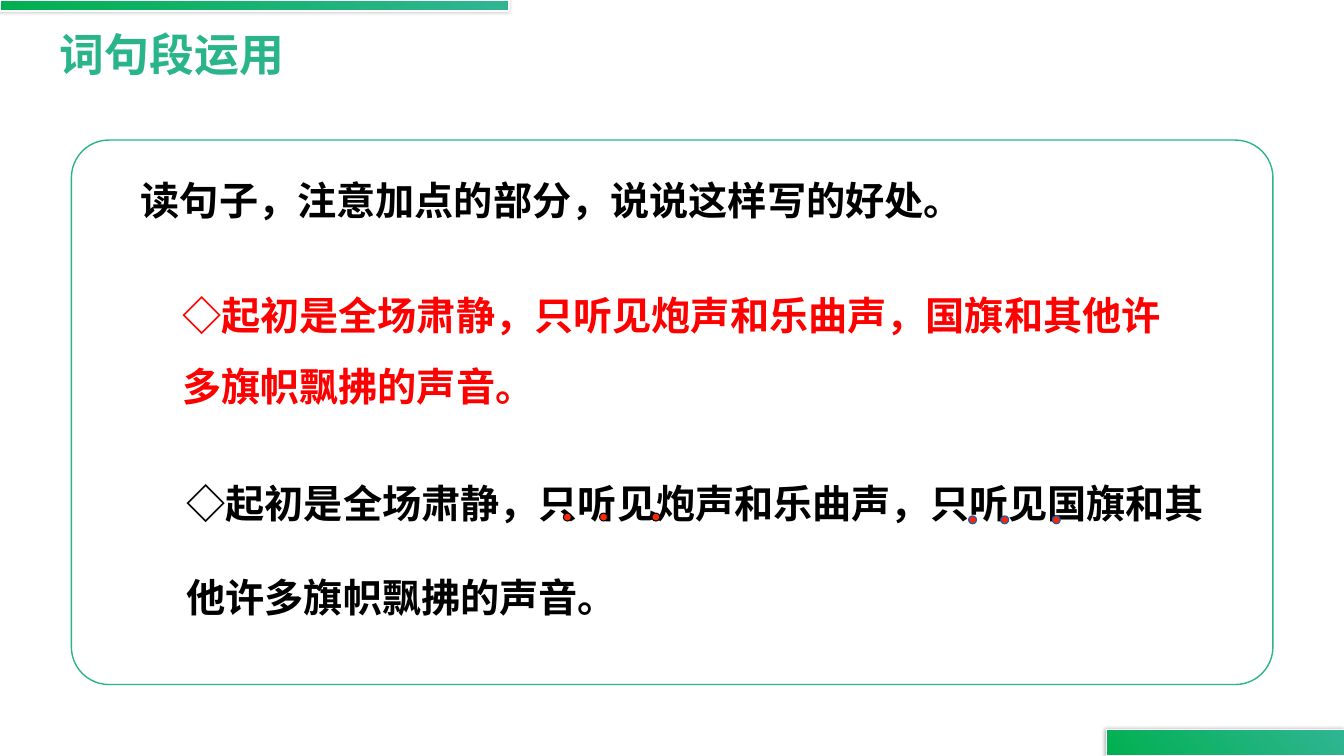
"""Build the slide on sentence practice with a framed pair of example sentences."""
from dataclasses import dataclass

from lxml.etree import SubElement
from pptx import Presentation
from pptx.dml.color import RGBColor
from pptx.enum.shapes import MSO_SHAPE
from pptx.enum.text import MSO_ANCHOR, MSO_AUTO_SIZE
from pptx.oxml.ns import qn
from pptx.shapes.autoshape import Shape
from pptx.slide import Slide
from pptx.util import Cm, Pt

COLOURS = {
    "green": "00B050",
    "teal": "30B593",
    "title": "2AB48A",
    "white": "FFFFFF",
    "black": "000000",
    "red": "FF0000",
    "dot": "F82704",
    "blue": "0563C1",
}
DOT_SIZE = 0.2


@dataclass(frozen=True)
class Area:
    left: float
    top: float
    width: float
    height: float

    def lengths(self) -> tuple[Cm, Cm, Cm, Cm]:
        return Cm(self.left), Cm(self.top), Cm(self.width), Cm(self.height)


@dataclass(frozen=True)
class Passage:
    text: str
    area: Area
    colour: str
    size: int = 28
    spacing: float = 1.0
    wrap: bool = True
    inset: float = 0.25
    anchor: MSO_ANCHOR = MSO_ANCHOR.TOP
    fit: MSO_AUTO_SIZE = MSO_AUTO_SIZE.SHAPE_TO_FIT_TEXT


@dataclass(frozen=True)
class DotRow:
    lefts: tuple[float, ...]
    top: float
    outline: str


BARS = (Area(0, 0, 12.83, 0.28), Area(27.89, 18.39, 5.99, 0.66))
FRAME = Area(1.8, 3.53, 30.28, 13.72)
PASSAGES = (
    Passage("词句段运用", Area(0.94, 0.74, 7.67, 1.4), "title", size=32, spacing=0.9,
            inset=0.57, anchor=MSO_ANCHOR.MIDDLE, fit=MSO_AUTO_SIZE.NONE),
    Passage("读句子，注意加点的部分，说说这样写的好处。",
            Area(3.3, 4.32, 22.02, 1.45), "black", wrap=False),
    Passage("◇起初是全场肃静，只听见炮声和乐曲声，国旗和其他许多旗帜飘拂的声音。",
            Area(4.34, 6.63, 26.11, 3.66), "red", spacing=1.5),
    Passage("◇起初是全场肃静，只听见炮声和乐曲声，只听见国旗和其他许多旗帜飘拂的声音。",
            Area(4.45, 10.77, 26.52, 4.7), "black", spacing=2.0),
)
DOT_ROWS = (
    DotRow((14.2, 15.11, 16.43), 12.93, "black"),
    DotRow((24.41, 25.22, 26.52), 13.0, "blue"),
)


def colour(name: str) -> RGBColor:
    return RGBColor.from_string(COLOURS[name])


def apply(target: object, values: dict[str, object]) -> None:
    for name, value in values.items():
        setattr(target, name, value)


def add_outlined(page: Slide, kind: MSO_SHAPE, area: Area, outline: str, width: float) -> Shape:
    shape = page.shapes.add_shape(kind, *area.lengths())
    shape.shadow.inherit = False
    shape.line.color.rgb = colour(outline)
    shape.line.width = Pt(width)
    return shape


def add_bar(page: Slide, area: Area) -> None:
    bar = add_outlined(page, MSO_SHAPE.RECTANGLE, area, "white", 1)
    bar.fill.gradient()
    bar.fill.gradient_angle = 45
    for stop, name in zip(bar.fill.gradient_stops, ("green", "teal")):
        apply(stop, {"position": 0.0 if name == "green" else 1.0})
        stop.color.rgb = colour(name)
    effects = bar.element.spPr.find(qn("a:effectLst"))
    shadow = SubElement(effects, qn("a:outerShdw"), blurRad=str(Pt(3)), dist=str(Pt(1)),
                        dir="10800000", rotWithShape="0")
    tint = SubElement(shadow, qn("a:srgbClr"), val=COLOURS["black"])
    SubElement(tint, qn("a:alpha"), val="30000")


def add_frame(page: Slide) -> None:
    frame = add_outlined(page, MSO_SHAPE.ROUNDED_RECTANGLE, FRAME, "title", 1)
    frame.adjustments[0] = 0.069
    frame.fill.background()


def add_passage(page: Slide, passage: Passage) -> None:
    box = page.shapes.add_textbox(*passage.area.lengths())
    apply(box.text_frame, {
        "word_wrap": passage.wrap,
        "auto_size": passage.fit,
        "vertical_anchor": passage.anchor,
        "margin_left": Cm(passage.inset),
    })
    para = box.text_frame.paragraphs[0]
    para.line_spacing = passage.spacing
    span = para.add_run()
    span.text = passage.text
    apply(span.font, {"name": "Arial", "size": Pt(passage.size), "bold": True})
    span.font.color.rgb = colour(passage.colour)


def add_dots(page: Slide, row: DotRow) -> None:
    for left in row.lefts:
        area = Area(left, row.top, DOT_SIZE, DOT_SIZE)
        dot = add_outlined(page, MSO_SHAPE.OVAL, area, row.outline, 0.75)
        dot.fill.solid()
        dot.fill.fore_color.rgb = colour("dot")


def main() -> None:
    deck = Presentation()
    apply(deck, {"slide_width": Cm(33.87), "slide_height": Cm(19.05)})
    page = deck.slides.add_slide(deck.slide_layouts[6])
    for area in BARS:
        add_bar(page, area)
    add_frame(page)
    for passage in PASSAGES:
        add_passage(page, passage)
    for row in DOT_ROWS:
        add_dots(page, row)
    deck.save("out.pptx")


if __name__ == "__main__":
    main()
